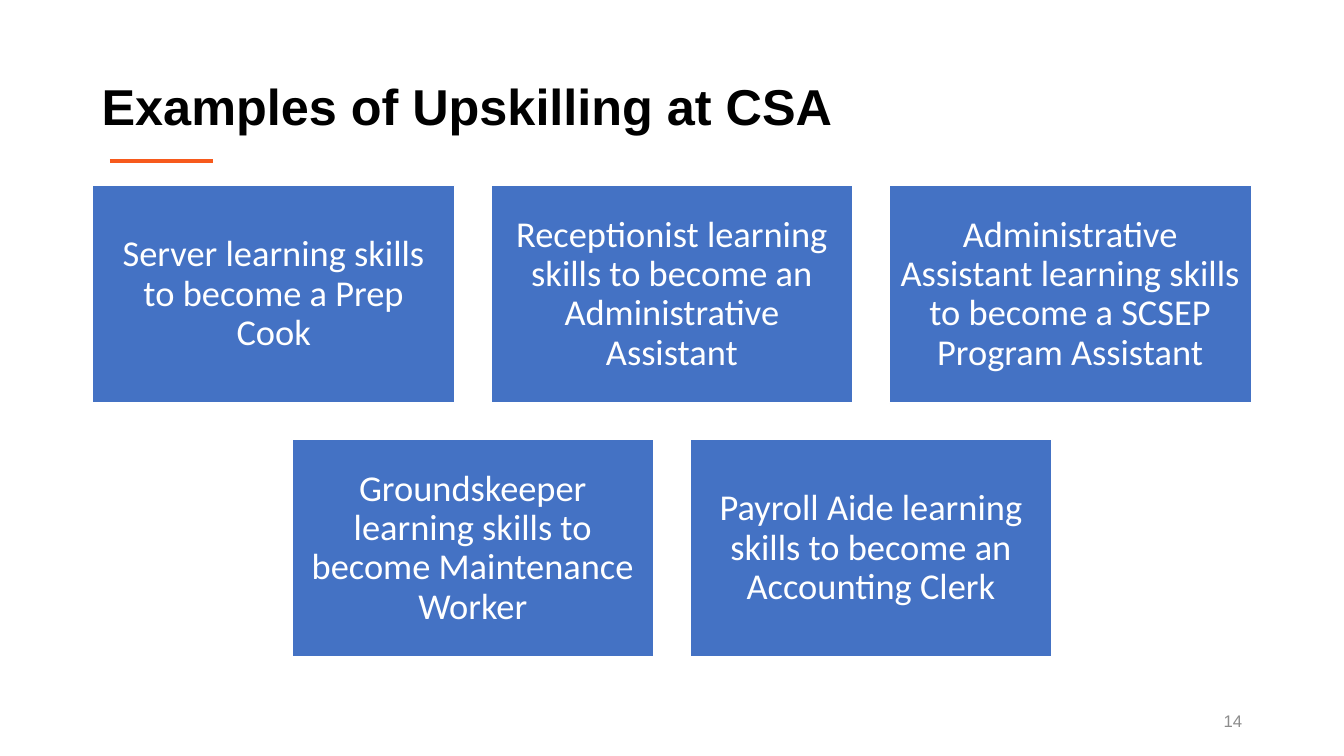
from dataclasses import dataclass

from lxml.etree import SubElement
from pptx import Presentation
from pptx.dml.color import RGBColor
from pptx.enum.shapes import MSO_CONNECTOR as Connector, MSO_SHAPE as Shape
from pptx.enum.text import MSO_ANCHOR as Anchor, PP_ALIGN as Align
from pptx.oxml.ns import qn
from pptx.util import Inches, Pt


@dataclass(frozen=True)
class Theme:
    heading_font: str = "Arial"
    card_font: str = "Calibri"
    black: str = "000000"
    white: str = "FFFFFF"
    blue: str = "4472C4"
    orange: str = "F75A1C"
    grey: str = "8C8C8C"
    title_size: int = 36
    card_size: int = 26
    number_size: int = 12


THEME = Theme()
EXAMPLE_ROWS = [
    [
        "Server learning skills to become a Prep Cook",
        "Receptionist learning skills to become an Administrative Assistant",
        "Administrative Assistant learning skills to become a SCSEP Program Assistant",
    ],
    [
        "Groundskeeper learning skills to become Maintenance Worker",
        "Payroll Aide learning skills to become an Accounting Clerk",
    ],
]


def write_text(shape, text, *, font, size, color, bold=False, align=Align.LEFT,
               line_spacing=1.0, margins=(0.1, 0.05)):
    """Fill a shape with one vertically centred paragraph."""
    frame = shape.text_frame
    frame.word_wrap = True
    frame.vertical_anchor = Anchor.MIDDLE
    frame.margin_left = frame.margin_right = Inches(margins[0])
    frame.margin_top = frame.margin_bottom = Inches(margins[1])
    paragraph = frame.paragraphs[0]
    paragraph.alignment = align
    paragraph.line_spacing = line_spacing
    run = paragraph.add_run()
    run.text = text
    run.font.name = font
    run.font.size = Pt(size)
    run.font.bold = bold
    run.font.color.rgb = RGBColor.from_string(color)


def add_title(slide, left, top, width, height):
    # Heading
    box = slide.shapes.add_textbox(*map(Inches, (left, top, width, height)))
    write_text(box, "Examples of Upskilling at CSA", font=THEME.heading_font,
               size=THEME.title_size, color=THEME.black, bold=True, line_spacing=0.9)

    # Short accent rule under the heading
    start, rule_top, length = left + 0.18, top + height - 0.01, 1.02
    rule = slide.shapes.add_connector(
        Connector.STRAIGHT, Inches(start), Inches(rule_top),
        Inches(start + length), Inches(rule_top))
    rule.line.color.rgb = RGBColor.from_string(THEME.orange)
    rule.line.width = Pt(3)
    SubElement(rule._element.spPr, qn("a:effectLst"))


def add_card(slide, text, left, top, width, height):
    card = slide.shapes.add_shape(
        Shape.RECTANGLE, *map(Inches, (left, top, width, height)))
    card.shadow.inherit = False
    card.fill.solid()
    card.fill.fore_color.rgb = RGBColor.from_string(THEME.blue)
    card.line.color.rgb = RGBColor.from_string(THEME.white)
    card.line.width = Pt(1)
    write_text(card, text, font=THEME.card_font, size=THEME.card_size,
               color=THEME.white, align=Align.CENTER, line_spacing=0.9,
               margins=(0.11, 0.11))


def add_examples(slide, left, top, width, height, gap=0.36):
    """Lay out equal cards in rows, each row centred in the box."""
    columns = max(map(len, EXAMPLE_ROWS))
    card_width = (width - gap * (columns - 1)) / columns
    card_height = (height - gap * (len(EXAMPLE_ROWS) - 1)) / len(EXAMPLE_ROWS)
    for row, examples in enumerate(EXAMPLE_ROWS):
        indent = (columns - len(examples)) * (card_width + gap) / 2
        for column, text in enumerate(examples):
            add_card(slide, text,
                     left + indent + column * (card_width + gap),
                     top + row * (card_height + gap), card_width, card_height)


def add_slide_number(slide, left, top, width, height):
    box = slide.shapes.add_textbox(*map(Inches, (left, top, width, height)))
    write_text(box, "14", font=THEME.heading_font, size=THEME.number_size,
               color=THEME.grey, align=Align.RIGHT)


def main():
    presentation = Presentation()
    presentation.slide_width = Inches(13.33)
    presentation.slide_height = Inches(7.5)
    slide = presentation.slides.add_slide(presentation.slide_layouts[6])

    add_title(slide, 0.91, 0.56, 11.5, 1.05)
    add_examples(slide, 0.92, 1.84, 11.49, 4.68)
    add_slide_number(slide, 9.42, 6.95, 3, 0.4)

    presentation.save("out.pptx")


if __name__ == "__main__":
    main()
